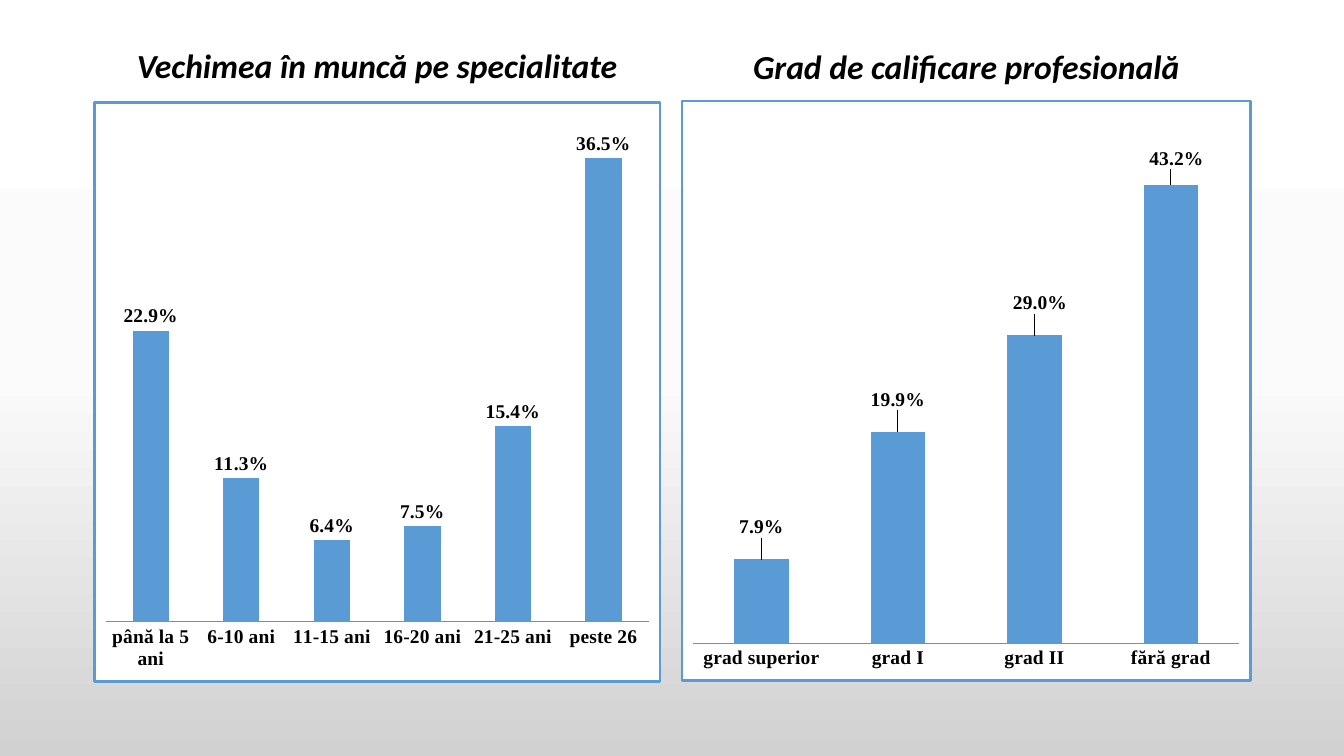
from lxml.etree import SubElement
from pptx import Presentation
from pptx.chart.data import CategoryChartData
from pptx.dml.color import RGBColor
from pptx.enum.chart import XL_CHART_TYPE, XL_LABEL_POSITION, XL_TICK_LABEL_POSITION, XL_TICK_MARK
from pptx.enum.text import MSO_ANCHOR, PP_ALIGN
from pptx.oxml import parse_xml
from pptx.oxml.ns import nsdecls, qn
from pptx.util import Cm, Pt

COLORS = {"text": "000000", "bar": "5B9BD5", "panel": "FFFFFF", "axis": "8C8C8C"}
BACKGROUND_STOPS = [(0, "FFFFFF"), (50, "FBFBFB"), (100, "D1D1D1")]
PERCENT = "0.0%"


def rgb(name):
    return RGBColor.from_string(COLORS[name])


def paint_background(page):
    fill = page.background.fill
    fill.gradient()
    fill.gradient_angle = 270
    stops = page.background._cSld.find(".//" + qn("a:gsLst"))
    for stop in list(stops):
        stops.remove(stop)
    for percent, color in BACKGROUND_STOPS:
        stop = SubElement(stops, qn("a:gs"), pos=str(percent * 1000))
        SubElement(stop, qn("a:srgbClr"), val=color)


def place_heading(heading, text, left, top, width, height):
    heading.left, heading.top, heading.width, heading.height = left, top, width, height
    frame = heading.text_frame
    frame.text = text
    frame.vertical_anchor = MSO_ANCHOR.BOTTOM
    para = frame.paragraphs[0]
    para.alignment = PP_ALIGN.CENTER
    para.line_spacing = 0.9
    para.space_before = Pt(0)
    font = para.font
    font.name, font.size, font.bold, font.italic = "Calibri", Pt(24), True, True
    font.color.rgb = rgb("text")


def style_font(font):
    font.name, font.size, font.bold = "Times New Roman", Pt(14), True
    font.color.rgb = rgb("text")


def frame_chart(chart):
    chart._chartSpace.find(qn("c:chart")).addnext(parse_xml(
        f'<c:spPr {nsdecls("c", "a")}>'
        f'<a:solidFill><a:srgbClr val="{COLORS["panel"]}"/></a:solidFill>'
        f'<a:ln w="{Pt(2)}"><a:solidFill><a:srgbClr val="{COLORS["bar"]}"/></a:solidFill></a:ln>'
        "</c:spPr>"))


def shift_label(point, across, down):
    label = point.data_label
    style_font(label.font)
    label.position = XL_LABEL_POSITION.OUTSIDE_END
    index = label._dLbl.find(qn("c:idx"))
    index.addnext(parse_xml(
        f'<c:numFmt {nsdecls("c")} formatCode="{PERCENT}" sourceLinked="0"/>'))
    index.addnext(parse_xml(
        f'<c:layout {nsdecls("c")}><c:manualLayout>'
        f'<c:x val="{across}"/><c:y val="{down}"/></c:manualLayout></c:layout>'))


def place_chart(page, shares, maximum, label_shifts, left, top, width, height):
    data = CategoryChartData(number_format=PERCENT)
    data.categories = list(shares)
    data.add_series("Series 1", list(shares.values()))
    chart = page.shapes.add_chart(
        XL_CHART_TYPE.COLUMN_CLUSTERED, left, top, width, height, data).chart
    chart.has_legend = False
    chart.has_title = False
    style_font(chart.font)
    frame_chart(chart)

    value_axis = chart.value_axis
    value_axis.visible = False
    value_axis.has_major_gridlines = False
    value_axis.minimum_scale, value_axis.maximum_scale = 0, maximum
    category_axis = chart.category_axis
    category_axis.major_tick_mark = XL_TICK_MARK.NONE
    category_axis.tick_label_position = XL_TICK_LABEL_POSITION.NEXT_TO_AXIS
    category_axis.format.line.color.rgb = rgb("axis")
    category_axis.format.line.width = Pt(0.75)

    plot = chart.plots[0]
    plot.gap_width = 150
    plot.vary_by_categories = False
    series = plot.series[0]
    series.format.fill.solid()
    series.format.fill.fore_color.rgb = rgb("bar")
    labels = series.data_labels
    labels.show_value = True
    labels.number_format = PERCENT
    labels.number_format_is_linked = False
    labels.position = XL_LABEL_POSITION.OUTSIDE_END
    style_font(labels.font)
    for index, (across, down) in enumerate(label_shifts):
        shift_label(series.points[index], across, down)


def build_seniority(page, heading, left, top, width):
    place_heading(heading, "Vechimea în muncă pe specialitate",
                  left, top + Cm(0.05), width, Cm(1.37))
    shares = {"până la 5 ani": 0.229, "6-10 ani": 0.113, "11-15 ani": 0.064,
              "16-20 ani": 0.075, "21-25 ani": 0.154, "peste 26": 0.365}
    place_chart(page, shares, 0.4, [], left, top + Cm(1.68), width, Cm(14.66))


def build_qualification(page, heading, left, top, width):
    place_heading(heading, "Grad de calificare profesională",
                  left, top, width, Cm(1.45))
    shares = {"grad superior": 0.079, "grad I": 0.199, "grad II": 0.29, "fără grad": 0.432}
    shifts = [(0, -0.03), (0, -0.03), (0.01, -0.03), (0.01, -0.02)]
    place_chart(page, shares, 0.5, shifts, left, top + Cm(1.65), width, Cm(14.68))


def main():
    deck = Presentation()
    deck.slide_width, deck.slide_height = Cm(33.87), Cm(19.05)
    page = deck.slides.add_slide(deck.slide_layouts.get_by_name("Comparison"))
    paint_background(page)
    headings = {1: build_seniority, 3: build_qualification}
    boxes = {1: (Cm(2.34), Cm(0.86), Cm(14.33)), 3: (Cm(17.15), Cm(0.86), Cm(14.4))}
    for holder in list(page.placeholders):
        number = holder.placeholder_format.idx
        if number in headings:
            headings[number](page, holder, *boxes[number])
        else:
            holder._element.getparent().remove(holder._element)
    deck.save("out.pptx")


if __name__ == "__main__":
    main()
